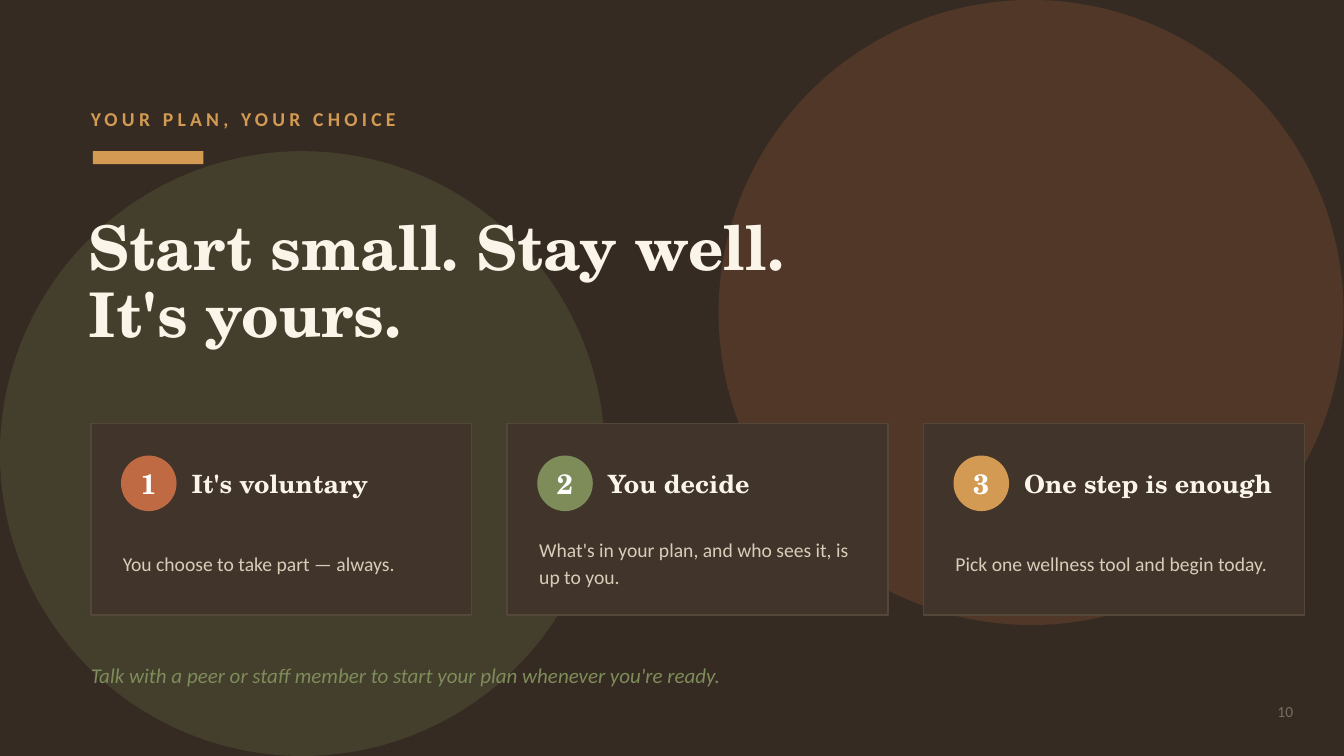
from lxml.etree import SubElement
from pptx import Presentation
from pptx.dml.color import RGBColor
from pptx.enum.shapes import MSO_SHAPE
from pptx.enum.text import MSO_ANCHOR, MSO_AUTO_SIZE, PP_ALIGN
from pptx.oxml.ns import qn
from pptx.util import Cm, Pt

# Colours and fonts
DARK = RGBColor(0x36, 0x2B, 0x22)
CARD = RGBColor(0x41, 0x34, 0x2A)
EDGE = RGBColor(0x55, 0x46, 0x3A)
GREEN = RGBColor(0x7E, 0x8C, 0x5A)
RUST = RGBColor(0xC0, 0x6A, 0x43)
GOLD = RGBColor(0xD2, 0x9A, 0x52)
CREAM = RGBColor(0xFB, 0xF5, 0xE9)
SAND = RGBColor(0xD9, 0xCD, 0xBA)
GREY = RGBColor(0x7C, 0x6E, 0x5E)
WHITE = RGBColor(0xFF, 0xFF, 0xFF)
SERIF, SANS = "TeX Gyre Schola", "Calibri"

# Content
LABEL = "YOUR PLAN, YOUR CHOICE"
TITLE = "Start small. Stay well.\nIt's yours."
STEPS = [
    ("It's voluntary", "You choose to take part — always.", RUST),
    ("You decide", "What's in your plan, and who sees it, is up to you.", GREEN),
    ("One step is enough", "Pick one wellness tool and begin today.", GOLD),
]
CLOSING = "Talk with a peer or staff member to start your plan whenever you're ready."
NUMBER = "10"

# Layout in centimetres
LEFT, TOP = 2.29, 10.67
WIDTH, HEIGHT, PITCH = 9.6, 4.83, 10.49
BADGE = 1.4


def place(shape, box):
    shape.left, shape.top, shape.width, shape.height = map(Cm, box)


def draw(kind, box, fill, edge=None, alpha=None):
    shape = slide.shapes.add_shape(kind, *map(Cm, box))
    shape.shadow.inherit = False
    shape.fill.solid()
    shape.fill.fore_color.rgb = fill
    if edge:
        shape.line.color.rgb = edge
        shape.line.width = Pt(1)
    else:
        shape.line.fill.background()
    if alpha:
        tone = shape.fill._xPr.find(".//" + qn("a:srgbClr"))
        SubElement(tone, qn("a:alpha"), val=str(alpha * 1000))
    return shape


def write(shape, text, size, color, face=SANS, bold=False, italic=False,
          align=PP_ALIGN.LEFT, lead=None, inset=0):
    frame = shape.text_frame
    frame.text = text
    frame.word_wrap = True
    frame.auto_size = MSO_AUTO_SIZE.NONE
    frame.vertical_anchor = MSO_ANCHOR.MIDDLE
    frame.margin_left = frame.margin_right = Cm(inset)
    frame.margin_top = frame.margin_bottom = Cm(inset / 2)
    for para in frame.paragraphs:
        para.alignment = align
        if lead:
            para.line_spacing = Pt(lead)
        font = para.font
        font.name, font.size = face, Pt(size)
        font.bold, font.italic = bold, italic
        font.color.rgb = color
    return shape


def label(box, *args, **style):
    return write(slide.shapes.add_textbox(*map(Cm, box)), *args, **style)


deck = Presentation()
deck.slide_width, deck.slide_height = Cm(33.87), Cm(19.05)
slide = deck.slides.add_slide(deck.slide_layouts[5])
slide.background.fill.solid()
slide.background.fill.fore_color.rgb = DARK

# Backdrop circles and accent bar
draw(MSO_SHAPE.OVAL, (0, 3.81, 15.24, 15.24), GREEN, alpha=20)
draw(MSO_SHAPE.OVAL, (18.11, 0, 15.75, 15.75), RUST, alpha=20)
draw(MSO_SHAPE.RECTANGLE, (2.34, 3.81, 2.79, 0.33), GOLD)

# Label and title, with the title raised above the circles
top = label((LEFT, 2.41, 27.94, 1.14), LABEL, 14, GOLD, bold=True)
for run in top.text_frame.paragraphs[0].runs:
    run._r.get_or_add_rPr().set("spc", "300")
title = slide.shapes.title
place(title, (2.24, 4.7, 28.96, 4.83))
write(title, TITLE, 44, CREAM, face=SERIF, bold=True, lead=48)
slide.shapes._spTree.append(title._element)

# Step cards
for i, (head, body, color) in enumerate(STEPS):
    x = LEFT + i * PITCH
    y = TOP + 0.81
    draw(MSO_SHAPE.RECTANGLE, (x, TOP, WIDTH, HEIGHT), CARD, edge=EDGE)
    badge = draw(MSO_SHAPE.OVAL, (x + 0.76, y, BADGE, BADGE), color)
    write(badge, str(i + 1), 20, WHITE, face=SERIF, bold=True,
          align=PP_ALIGN.CENTER)
    label((x + 2.54, y, 6.55, BADGE), head, 18, CREAM, face=SERIF, bold=True)
    label((x + 0.81, TOP + 2.54, 8.08, 1.9), body, 14, SAND, lead=19)

# Closing line and page number
label((LEFT, 16.38, 28.96, 1.27), CLOSING, 15, GREEN, italic=True)
label((31.57, 17.48, 1.27, 0.89), NUMBER, 11, GREY,
      align=PP_ALIGN.RIGHT, inset=0.25)

deck.save("out.pptx")
